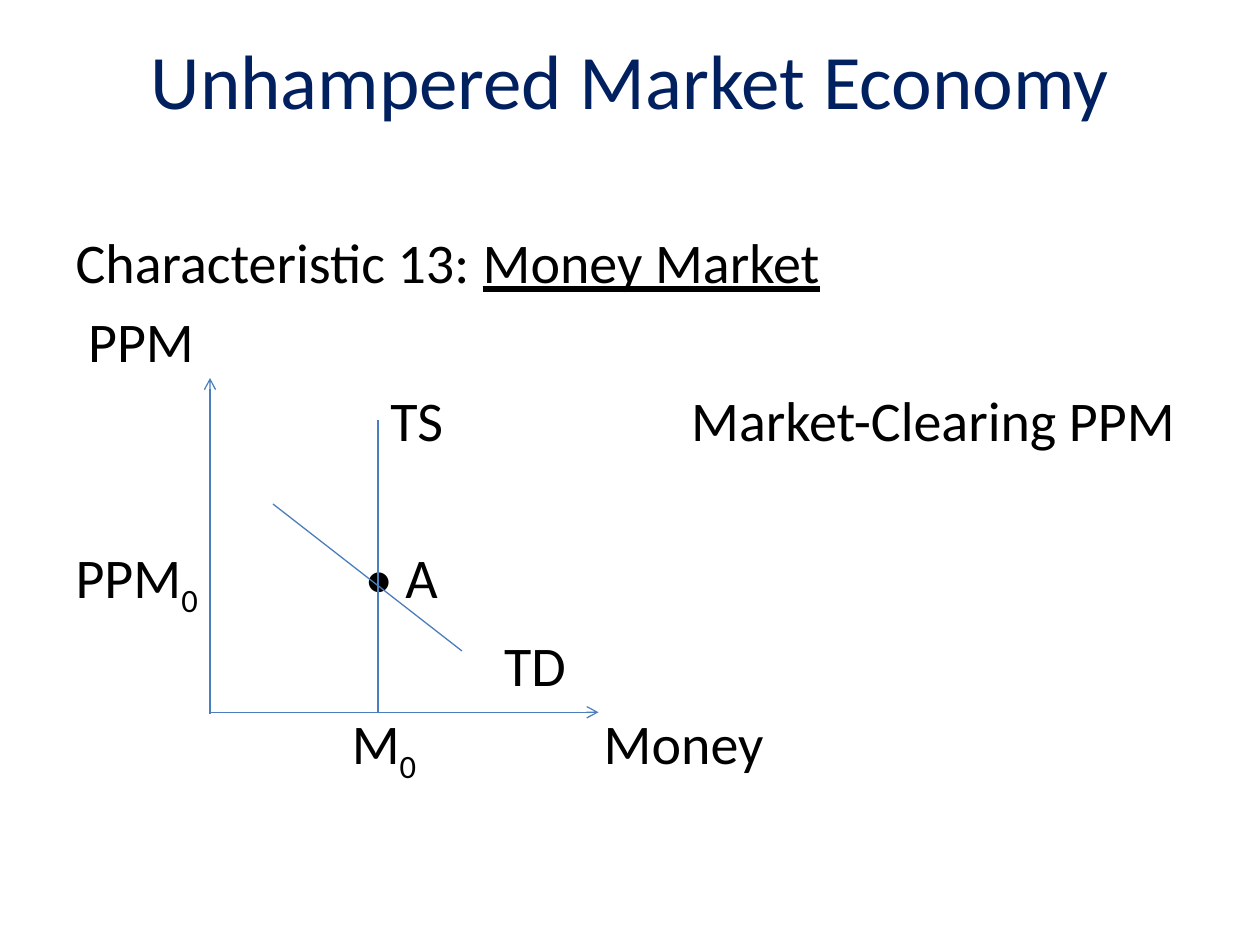
from dataclasses import dataclass

from lxml.etree import SubElement
from pptx import Presentation
from pptx.dml.color import RGBColor
from pptx.enum.shapes import MSO_CONNECTOR
from pptx.enum.text import MSO_ANCHOR, PP_ALIGN
from pptx.oxml.ns import qn
from pptx.util import Pt


@dataclass(frozen=True)
class Theme:
    font: str = "Calibri"
    title_size: int = 44
    body_size: int = 32
    title_color: str = "002060"
    body_color: str = "000000"
    line_color: str = "4B7EBC"
    line_width: float = 0.75


THEME = Theme()
LINE_HEIGHT = 40
SUBSCRIPT = {"baseline": "-25000"}
UNDERLINE = {"u": "sng"}

# Left, top, width, then runs of text with their character attributes
LABELS = [
    (43.2, 130, 440, [("Characteristic 13: ", {}), ("Money Market", UNDERLINE)]),
    (50.4, 175, 62, [("PPM", {})]),
    (223, 220, 34, [("TS", {})]),
    (395, 220, 280, [("Market-Clearing PPM", {})]),
    (43.2, 310, 72, [("PPM", {}), ("0", SUBSCRIPT)]),
    (208.5, 310, 44, [("• A", {})]),
    (288, 360, 38, [("TD", {})]),
    (201, 405, 40, [("M", {}), ("0", SUBSCRIPT)]),
    (345, 405, 94, [("Money", {})]),
]

# Start, end, arrowhead at the end
GRAPH_LINES = [
    ((120, 408), (120, 216), True),
    ((120, 407), (342, 407), True),
    ((216, 240), (216, 407), False),
    ((156, 288), (264, 372), False),
]


def apply_format(target, values):
    for name, value in values.items():
        setattr(target, name, value)


def add_text(slide, box, runs, size, color, alignment=PP_ALIGN.LEFT,
             anchor=MSO_ANCHOR.TOP, wrap=False):
    frame = slide.shapes.add_textbox(*map(Pt, box)).text_frame
    apply_format(frame, {
        "word_wrap": wrap, "vertical_anchor": anchor,
        "margin_left": 0, "margin_right": 0,
        "margin_top": 0, "margin_bottom": 0,
    })
    paragraph = frame.paragraphs[0]
    paragraph.alignment = alignment
    for text, attributes in runs:
        run = paragraph.add_run()
        run.text = text
        apply_format(run.font, {"name": THEME.font, "size": Pt(size)})
        run.font.color.rgb = RGBColor.from_string(color)
        for name, value in attributes.items():
            run._r.get_or_add_rPr().set(name, value)


def add_line(slide, start, end, arrow):
    connector = slide.shapes.add_connector(
        MSO_CONNECTOR.STRAIGHT, *map(Pt, start + end))
    connector.line.width = Pt(THEME.line_width)
    connector.line.color.rgb = RGBColor.from_string(THEME.line_color)
    if arrow:
        SubElement(connector.line._get_or_add_ln(), qn("a:tailEnd"), type="arrow")
    SubElement(connector._element.spPr, qn("a:effectLst"))


def main():
    presentation = Presentation()
    apply_format(presentation, {"slide_width": Pt(720), "slide_height": Pt(540)})
    slide = presentation.slides.add_slide(presentation.slide_layouts[6])

    add_text(slide, (0, 0, 720, 90), [("Unhampered Market Economy", {})],
             THEME.title_size, THEME.title_color,
             PP_ALIGN.CENTER, MSO_ANCHOR.MIDDLE, wrap=True)
    for left, top, width, runs in LABELS:
        add_text(slide, (left, top, width, LINE_HEIGHT), runs,
                 THEME.body_size, THEME.body_color)
    for start, end, arrow in GRAPH_LINES:
        add_line(slide, start, end, arrow)

    presentation.save("out.pptx")


if __name__ == "__main__":
    main()
